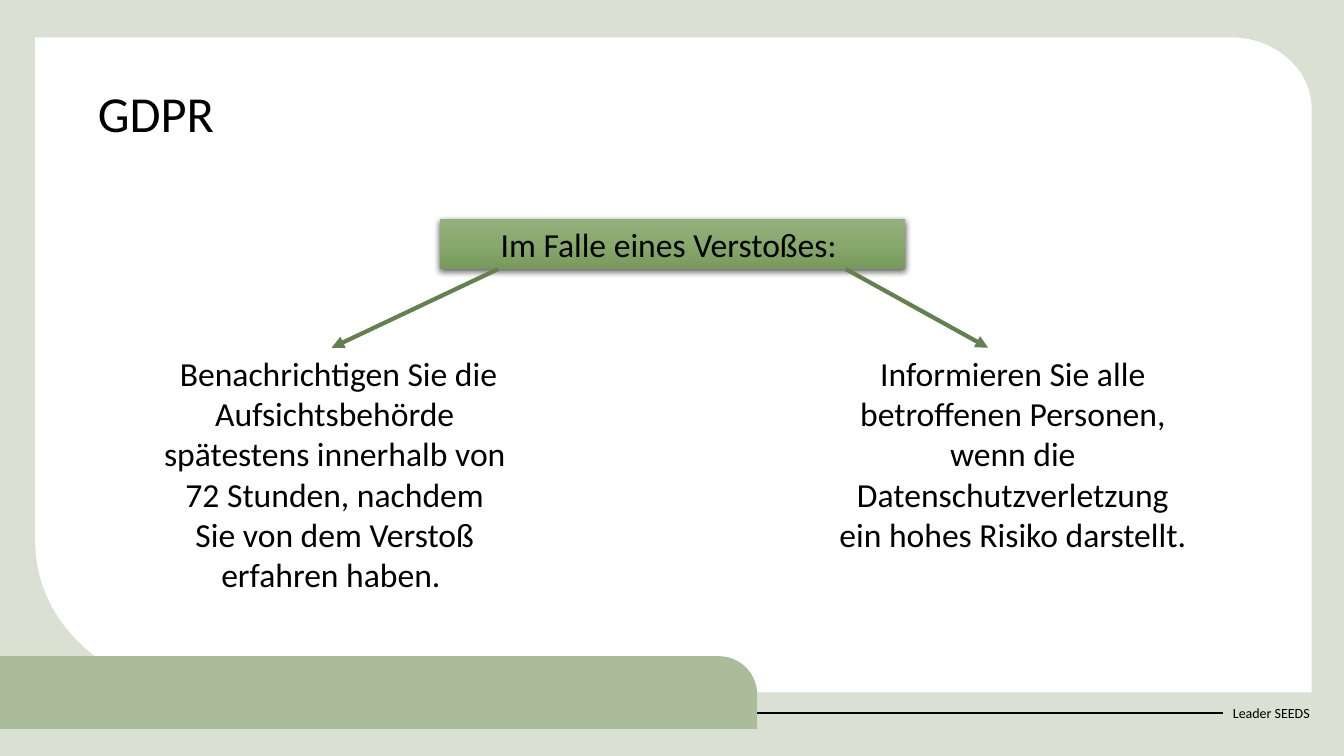
import copy
import math

import pptx
import pptx.dml.color
import pptx.enum.shapes
import pptx.enum.text
import pptx.oxml
import pptx.oxml.ns
import pptx.util

Inches = pptx.util.Inches
Pt = pptx.util.Pt
Align = pptx.enum.text.PP_ALIGN
Anchor = pptx.enum.text.MSO_ANCHOR
Fit = pptx.enum.text.MSO_AUTO_SIZE
qn = pptx.oxml.ns.qn

COLORS = {
    "back": "DAE0D2",
    "panel": "FFFFFF",
    "bar": "AABC99",
    "text": "000000",
    "arrow": "65804F",
    "light": "94B080",
    "mid": "87A96B",
    "dark": "77995C",
}


def arc(x, y, wide, high, start):
    """Return points along a clockwise quarter ellipse."""
    turns = [math.radians(start + 5 * step) for step in range(19)]
    return [(x + wide * math.cos(t), y + high * math.sin(t)) for t in turns]


class Board:
    """Draw styled elements on one slide."""

    def __init__(self, deck, font="Calibri"):
        self.font = font
        self.slide = deck.slides.add_slide(deck.slide_layouts[5])
        self.shapes = self.slide.shapes

    def color(self, name):
        """Return a named color."""
        return pptx.dml.color.RGBColor.from_string(COLORS[name])

    def paint(self, shape, name):
        """Give a shape a flat fill without line or shadow."""
        shape.shadow.inherit = False
        shape.fill.solid()
        shape.fill.fore_color.rgb = self.color(name)
        shape.line.fill.background()

    def rect(self, box, name):
        """Add a plain rectangle."""
        kind = pptx.enum.shapes.MSO_SHAPE.RECTANGLE
        shape = self.shapes.add_shape(kind, *map(Inches, box))
        self.paint(shape, name)
        return shape

    def outline(self, points, name):
        """Add a closed filled outline."""
        spots = [(Inches(x), Inches(y)) for x, y in points]
        pen = self.shapes.build_freeform(*spots[0])
        pen.add_line_segments(spots[1:], close=True)
        self.paint(pen.convert_to_shape(), name)

    def words(self, shape, text, size, align=Align.LEFT, anchor=Anchor.TOP, fit=Fit.NONE):
        """Fill a shape with one styled run."""
        frame = shape.text_frame
        frame.word_wrap = True
        frame.auto_size = fit
        frame.vertical_anchor = anchor
        para = frame.paragraphs[0]
        para.alignment = align
        run = para.add_run()
        run.text = text
        run.font.name = self.font
        run.font.size = Pt(size)
        run.font.color.rgb = self.color("text")
        return para

    def title(self, text, box):
        """Place the title above the backdrop."""
        shape = self.shapes.title
        shape.left, shape.top, shape.width, shape.height = map(Inches, box)
        self.words(shape, text, 36).line_spacing = 0.9
        tree = shape.element.getparent()
        tree.append(shape.element)

    def label(self, text, box, size=24, **style):
        """Add a text box."""
        shape = self.shapes.add_textbox(*map(Inches, box))
        self.words(shape, text, size, **style)

    def banner(self, text, box):
        """Add a shaded heading with a soft shadow."""
        shape = self.rect(box, "mid")
        shape.fill.gradient()
        shape.fill.gradient_angle = 270
        stops = shape.fill.gradient_stops
        for stop, name, place in zip(stops, ("light", "dark"), (0, 1)):
            stop.color.rgb = self.color(name)
            stop.position = place
        props = shape.element.spPr
        ramp = props.find(".//" + qn("a:gsLst"))
        ramp.insert(1, copy.deepcopy(ramp[0]))
        middle = shape.fill.gradient_stops[1]
        middle.color.rgb = self.color("mid")
        middle.position = 0.5
        space = pptx.oxml.ns.nsdecls("a")
        props.find(qn("a:effectLst")).append(pptx.oxml.parse_xml(
            f'<a:outerShdw {space} blurRad="{Pt(4.5)}" dist="{Pt(1.5)}" '
            f'dir="5400000" algn="ctr" rotWithShape="0"><a:srgbClr val="{COLORS["text"]}">'
            '<a:alpha val="63000"/></a:srgbClr></a:outerShdw>'))
        self.words(shape, text, 24, Align.CENTER, fit=Fit.SHAPE_TO_FIT_TEXT)

    def line(self, start, end, name, width, arrow=False):
        """Add a straight line, with an arrowhead if wanted."""
        kind = pptx.enum.shapes.MSO_CONNECTOR.STRAIGHT
        link = self.shapes.add_connector(kind, *map(Inches, start + end))
        link.line.color.rgb = self.color(name)
        link.line.width = Pt(width)
        props = link._element.spPr
        space = pptx.oxml.ns.nsdecls("a")
        if arrow:
            head = pptx.oxml.parse_xml(f'<a:tailEnd {space} type="triangle"/>')
            props.find(qn("a:ln")).append(head)
        props.append(pptx.oxml.parse_xml(f'<a:effectLst {space}/>'))


def main():
    """Build and save the slide."""
    deck = pptx.Presentation()
    deck.slide_width, deck.slide_height = Inches(13.33), Inches(7.5)
    board = Board(deck)
    board.rect((0, 0, 13.33, 7.5), "back")
    board.outline([(0.35, 0.37), *arc(12.2, 1.08, 0.81, 0.71, -90),
                   (13.01, 6.87), *arc(2.05, 5.38, 1.7, 1.49, 90)], "panel")
    board.label("Leader SEEDS", (12.13, 6.87, 1.01, 0.4), 10, anchor=Anchor.MIDDLE)
    board.line((-0.01, 7.07), (12.13, 7.07), "text", 1.5)
    board.outline([(0, 7.23), (0, 6.51), *arc(7.13, 6.89, 0.38, 0.38, -90),
                   (7.51, 7.23)], "bar")
    board.title("GDPR", (0.87, 0.83, 11.59, 0.88))
    board.banner("Im Falle eines Verstoßes: ", (4.36, 2.17, 4.62, 0.5))
    duties = [
        ("Informieren Sie alle betroffenen Personen, wenn die "
         "Datenschutzverletzung ein hohes Risiko darstellt.", (8.2, 3.45, 3.69, 2.12)),
        (" Benachrichtigen Sie die Aufsichtsbehörde spätestens innerhalb von "
         "72 Stunden, nachdem Sie von dem Verstoß erfahren haben. ",
         (1.51, 3.45, 3.62, 2.52)),
    ]
    for text, box in duties:
        board.label(text, box, align=Align.CENTER, fit=Fit.SHAPE_TO_FIT_TEXT)
    for start, end in ((4.94, 3.29), (8.39, 9.8)):
        board.line((start, 2.67), (end, 3.45), "arrow", 3, arrow=True)
    deck.save("out.pptx")


if __name__ == "__main__":
    main()
